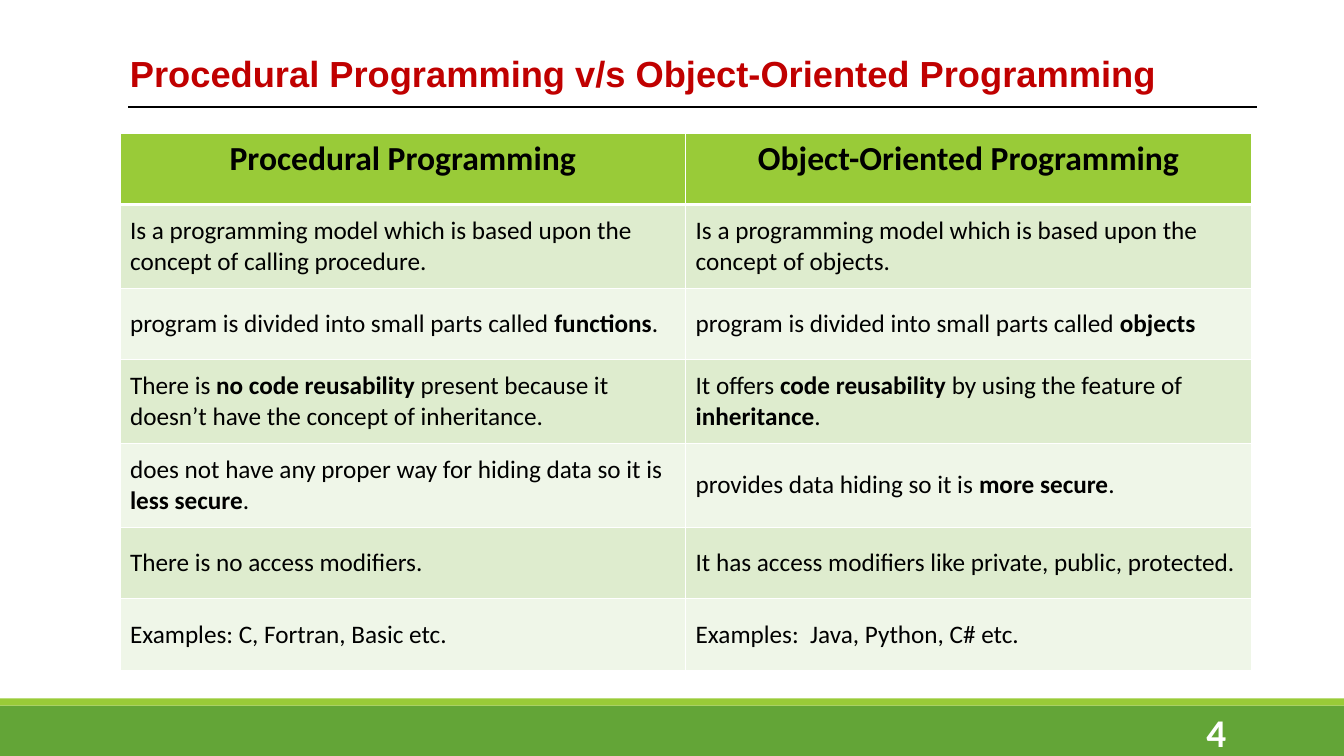
from dataclasses import dataclass

from lxml import etree
from pptx import Presentation
from pptx.dml.color import RGBColor
from pptx.enum.shapes import MSO_CONNECTOR, MSO_SHAPE
from pptx.enum.text import MSO_ANCHOR, PP_ALIGN
from pptx.oxml.ns import qn
from pptx.util import Inches, Pt


@dataclass(frozen=True)
class Theme:
    green: str = "63A537"
    lime: str = "99CB38"
    bands: tuple = ("DEECCE", "EFF6E8")
    red: str = "C00000"
    black: str = "000000"
    white: str = "FFFFFF"
    title_font: str = "Arial"
    body_font: str = "Calibri"
    title_size: float = 25.9
    head_size: int = 24
    body_size: int = 18
    number_size: int = 28


THEME = Theme()
WIDTH, HEIGHT = 13.33, 7.5
TALL, SHORT = 0.83, 0.71
ROW_HEIGHTS = [SHORT, TALL, SHORT, TALL, TALL, SHORT, SHORT]

ROWS = [
    ("*Procedural Programming*", "*Object-Oriented Programming*"),
    ("Is a programming model which is based upon the concept of calling procedure.",
     "Is a programming model which is based upon the concept of objects."),
    ("program is divided into small parts called *functions*.",
     "program is divided into small parts called *objects*"),
    ("There is *no code reusability* present because it doesn’t have the concept of inheritance.",
     "It offers *code reusability *by using the feature of *inheritance*."),
    ("does not have any proper way for hiding data so it is *less secure*.",
     "provides data hiding so it is *more secure*."),
    ("There is no access modifiers.",
     "It has access modifiers like private, public, protected."),
    ("Examples: C, Fortran, Basic etc.", "Examples:  Java, Python, C# etc."),
]


def style(p, font, size, color):
    p.font.name = font
    p.font.size = Pt(size)
    p.font.color.rgb = RGBColor.from_string(color)


def add_marked_text(p, text):
    for i, part in enumerate(text.split("*")):
        if part:
            r = p.add_run()
            r.text = part
            r.font.bold = i % 2 == 1


def add_text(s, box, text, font, size, color):
    tf = s.shapes.add_textbox(*map(Inches, box)).text_frame
    tf.word_wrap = True
    p = tf.paragraphs[0]
    p.text = text
    style(p, font, size, color)
    p.font.bold = True
    return tf


def add_bar(s, box, color):
    sp = s.shapes.add_shape(MSO_SHAPE.RECTANGLE, *map(Inches, box))
    sp.shadow.inherit = False
    sp.fill.solid()
    sp.fill.fore_color.rgb = RGBColor.from_string(color)
    sp.line.fill.background()


def add_border(cell, side, width):
    ln = etree.SubElement(cell._tc.get_or_add_tcPr(), qn(f"a:{side}"), w=str(Pt(width)))
    fill = etree.SubElement(ln, qn("a:solidFill"))
    etree.SubElement(fill, qn("a:srgbClr"), val=THEME.white)


def add_title(s, box, text):
    x, y, w, h = box
    tf = add_text(s, box, text, THEME.title_font, THEME.title_size, THEME.red)
    tf.margin_left, tf.margin_right = Inches(0.1), 0
    tf.paragraphs[0].line_spacing = 0.9
    rule_x, rule_y = x + 0.08, y + 0.55
    rule = s.shapes.add_connector(
        MSO_CONNECTOR.STRAIGHT,
        *map(Inches, (rule_x, rule_y, rule_x + 11.2, rule_y)))
    rule.line.color.rgb = RGBColor.from_string(THEME.black)
    rule.line.width = Pt(1)
    etree.SubElement(rule._element.spPr, qn("a:effectLst"))


def add_comparison(s, box, rows, heights):
    table = s.shapes.add_table(len(rows), len(rows[0]), *map(Inches, box)).table
    for col in table.columns:
        col.width = Inches(box[2] / len(rows[0]))
    for i, (texts, height) in enumerate(zip(rows, heights)):
        head = i == 0
        table.rows[i].height = Inches(height)
        for j, text in enumerate(texts):
            cell = table.cell(i, j)
            cell.vertical_anchor = MSO_ANCHOR.TOP if head else MSO_ANCHOR.MIDDLE
            p = cell.text_frame.paragraphs[0]
            p.alignment = PP_ALIGN.CENTER if head else PP_ALIGN.LEFT
            add_marked_text(p, text)
            size = THEME.head_size if head else THEME.body_size
            for r in p.runs:
                style(r, THEME.body_font, size, THEME.black)
            for side in ("lnL", "lnR", "lnT", "lnB"):
                thick = (head and side == "lnB") or (i == 1 and side == "lnT")
                add_border(cell, side, 3 if thick else 1)
            cell.fill.solid()
            color = THEME.lime if head else THEME.bands[(i - 1) % 2]
            cell.fill.fore_color.rgb = RGBColor.from_string(color)


def add_footer(s, box, number):
    x, y, w, h = box
    strip = 0.07
    add_bar(s, (x, y + strip, w, h - strip), THEME.green)
    add_bar(s, (x, y, w, strip), THEME.lime)
    tf = add_text(s, (x + w - 2.5, y + 0.13, 1.43, 0.4), number,
                  THEME.body_font, THEME.number_size, THEME.white)
    tf.vertical_anchor = MSO_ANCHOR.MIDDLE
    tf.paragraphs[0].alignment = PP_ALIGN.RIGHT


def main():
    prs = Presentation()
    prs.slide_width, prs.slide_height = Inches(WIDTH), Inches(HEIGHT)
    s = prs.slides.add_slide(prs.slide_layouts[6])
    left, footer_height = 1.19, 0.57
    add_footer(s, (0, HEIGHT - footer_height, WIDTH, footer_height), "4")
    add_title(s, (left, 0.51, 10.7, 0.63),
              "Procedural Programming v/s Object-Oriented Programming")
    add_comparison(s, (left, 1.32, 11.22, sum(ROW_HEIGHTS)), ROWS, ROW_HEIGHTS)
    prs.save("out.pptx")


if __name__ == "__main__":
    main()
